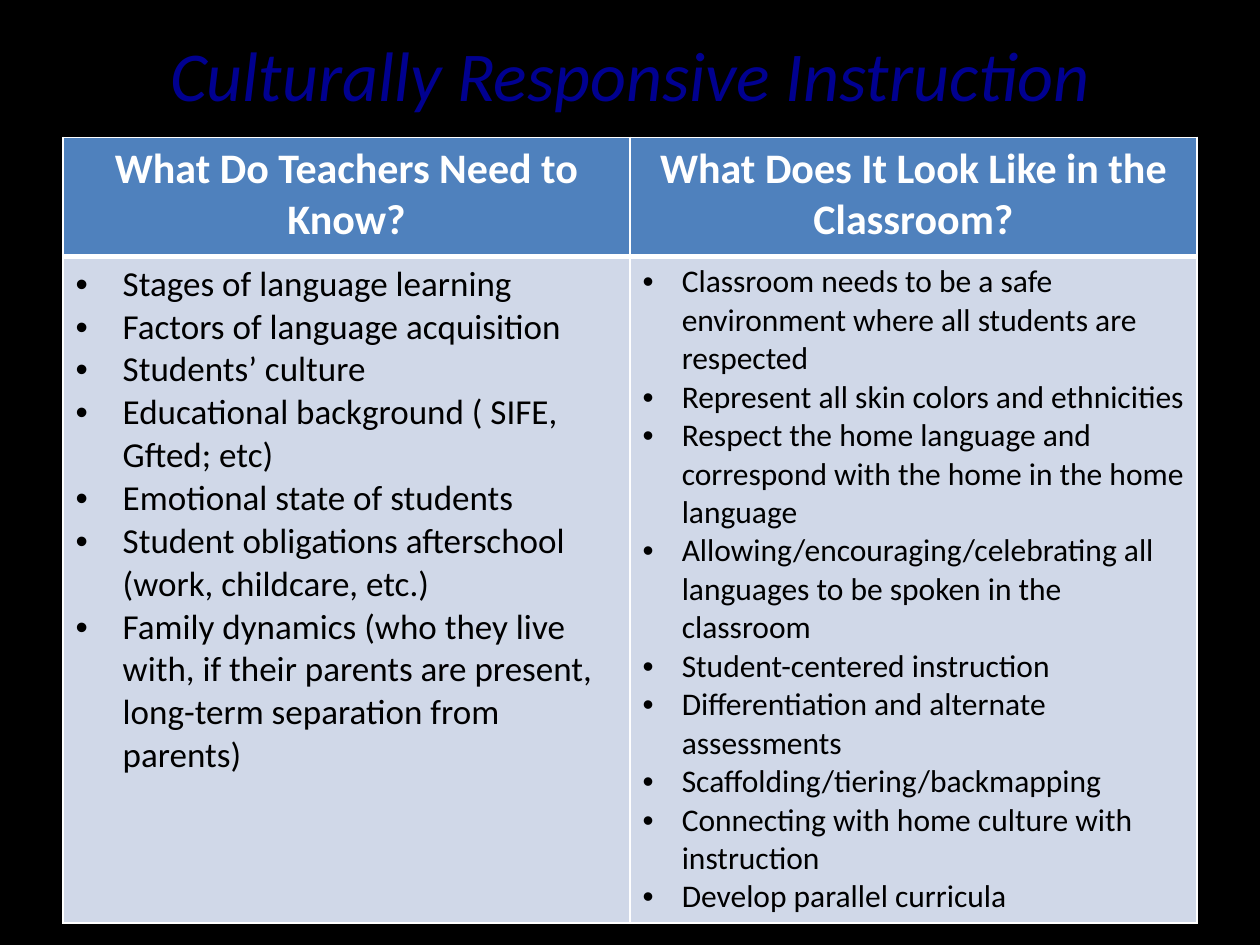
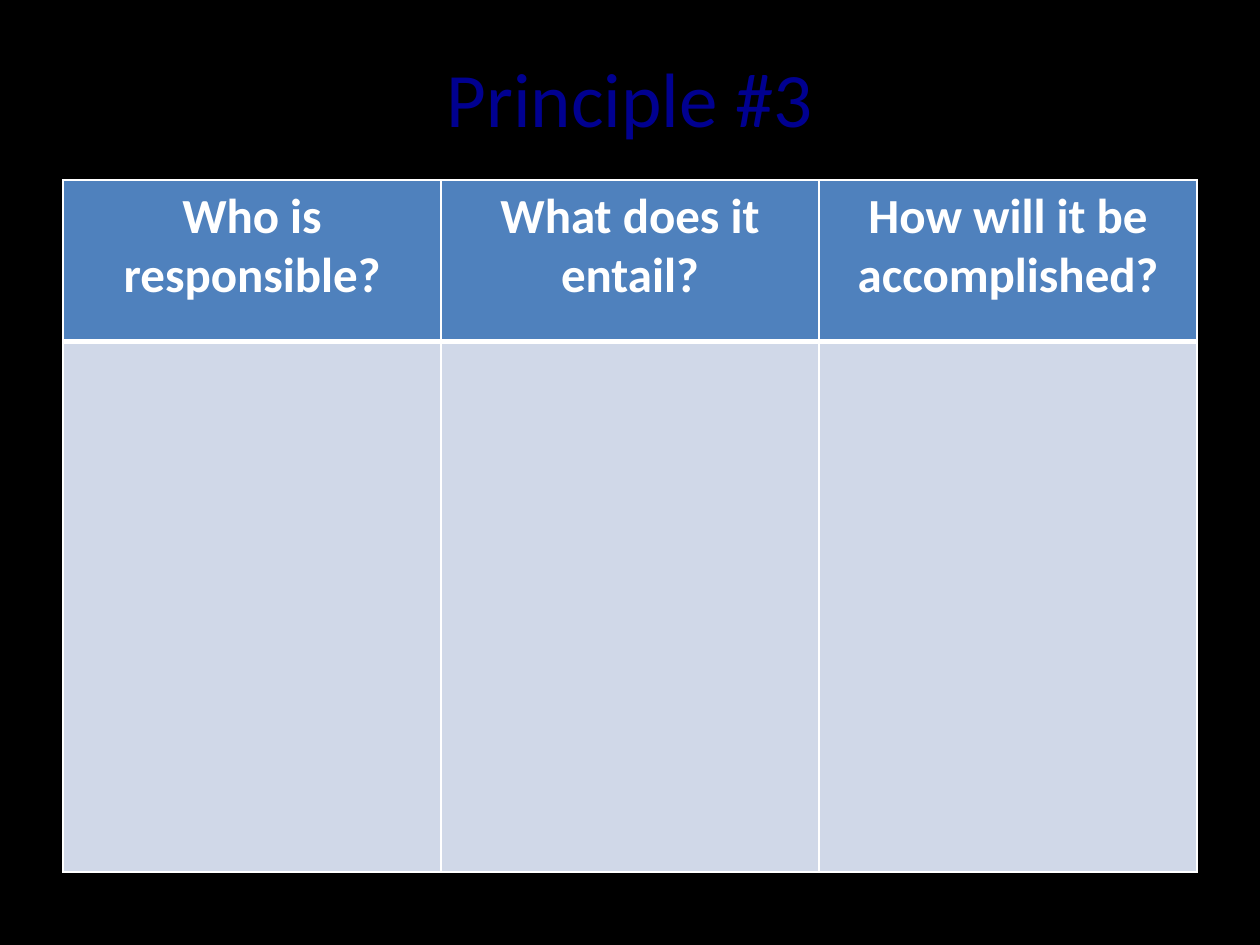
"""Build two slides on culturally responsive instruction, each a title over a table."""
from dataclasses import dataclass

from lxml.etree import SubElement
from pptx import Presentation
from pptx.dml.color import RGBColor
from pptx.enum.text import MSO_ANCHOR as Anchor, PP_ALIGN as Align
from pptx.oxml.ns import qn
from pptx.util import Cm, Pt


@dataclass(frozen=True)
class Theme:
    font: str = "Calibri"
    background: str = "000000"
    title: str = "000090"
    header_fill: str = "4F81BD"
    header_text: str = "FFFFFF"
    body_fill: str = "D0D8E8"
    body_text: str = "000000"
    border: str = "FFFFFF"
    thin: int = 1
    thick: int = 3
    left: float = 1.27
    width: float = 22.86


class Deck:
    def __init__(self, theme):
        self.theme = theme
        self.presentation = Presentation()
        self.presentation.slide_width = Cm(25.4)
        self.presentation.slide_height = Cm(19.05)
        self.slide = None

    def add_slide(self):
        layout = self.presentation.slide_layouts[6]
        self.slide = self.presentation.slides.add_slide(layout)
        fill = self.slide.background.fill
        fill.solid()
        fill.fore_color.rgb = RGBColor.from_string(self.theme.background)

    def add_run(self, paragraph, text, size, color, bold=False, italic=False):
        run = paragraph.add_run()
        run.text = text
        font = run.font
        font.name, font.size = self.theme.font, Pt(size)
        font.bold, font.italic = bold, italic
        font.color.rgb = RGBColor.from_string(color)

    def add_title(self, text, top, height, size, italic=False):
        box = self.slide.shapes.add_textbox(
            Cm(self.theme.left), Cm(top), Cm(self.theme.width), Cm(height))
        frame = box.text_frame
        frame.word_wrap = True
        frame.vertical_anchor = Anchor.MIDDLE
        paragraph = frame.paragraphs[0]
        paragraph.alignment = Align.CENTER
        self.add_run(paragraph, text, size, self.theme.title, italic=italic)

    def style_cell(self, cell, fill_color, top, bottom):
        thin = self.theme.thin
        properties = cell._tc.get_or_add_tcPr()
        for side, width in (("L", thin), ("R", thin), ("T", top), ("B", bottom)):
            line = SubElement(properties, qn(f"a:ln{side}"), w=str(Pt(width)))
            solid = SubElement(line, qn("a:solidFill"))
            SubElement(solid, qn("a:srgbClr"), val=self.theme.border)
        cell.fill.solid()
        cell.fill.fore_color.rgb = RGBColor.from_string(fill_color)

    def add_table(self, headers, top, header_height, body_height, header_size):
        theme = self.theme
        table = self.slide.shapes.add_table(
            2, len(headers), Cm(theme.left), Cm(top), Cm(theme.width),
            Cm(header_height + body_height)).table
        table.rows[0].height = Cm(header_height)
        table.rows[1].height = Cm(body_height)
        for index, header in enumerate(headers):
            table.columns[index].width = Cm(theme.width / len(headers))
            cell = table.cell(0, index)
            self.style_cell(cell, theme.header_fill, theme.thin, theme.thick)
            paragraph = cell.text_frame.paragraphs[0]
            paragraph.alignment = Align.CENTER
            self.add_run(paragraph, header, header_size, theme.header_text, bold=True)
            self.style_cell(table.cell(1, index), theme.body_fill, theme.thick, theme.thin)
        return table

    def add_bullets(self, cell, items, size, indent):
        frame = cell.text_frame
        for index, item in enumerate(items):
            paragraph = frame.add_paragraph() if index else frame.paragraphs[0]
            properties = paragraph._p.get_or_add_pPr()
            properties.set("marL", str(Cm(indent)))
            properties.set("indent", str(-Cm(indent)))
            SubElement(properties, qn("a:buFont"), typeface="Arial")
            SubElement(properties, qn("a:buChar"), char="•")
            self.add_run(paragraph, item, size, self.theme.body_text)


TEACHER_KNOWLEDGE = [
    "Stages of language learning",
    "Factors of language acquisition",
    "Students’ culture",
    "Educational background ( SIFE, Gfted; etc)",
    "Emotional state of students",
    "Student obligations afterschool (work, childcare, etc.)",
    "Family dynamics (who they live with, if their parents are present, "
    "long-term separation from parents)",
]
CLASSROOM_PRACTICE = [
    "Classroom needs to be a safe environment where all students are respected",
    "Represent all skin colors and ethnicities",
    "Respect the home language and correspond with the home in the home language",
    "Allowing/encouraging/celebrating all languages to be spoken in the classroom",
    "Student-centered instruction",
    "Differentiation and alternate assessments",
    "Scaffolding/tiering/backmapping",
    "Connecting with home culture with instruction",
    "Develop parallel curricula",
]


def main():
    deck = Deck(Theme())

    deck.add_slide()
    deck.add_title("Culturally Responsive Instruction", 0.18, 2.59, 40, italic=True)
    table = deck.add_table(
        ["What Do Teachers Need to Know?", "What Does It Look Like in the Classroom?"],
        2.77, 2.4, 13.44, 24)
    deck.add_bullets(table.cell(1, 0), TEACHER_KNOWLEDGE, 20, 0.95)
    deck.add_bullets(table.cell(1, 1), CLASSROOM_PRACTICE, 18, 0.79)

    deck.add_slide()
    deck.add_title("Principle #3", 0.76, 2.39, 44)
    deck.add_table(
        ["Who is responsible?", "What does it entail?", "How will it be accomplished?"],
        3.63, 3.25, 10.7, 28)

    deck.presentation.save("out.pptx")


if __name__ == "__main__":
    main()
